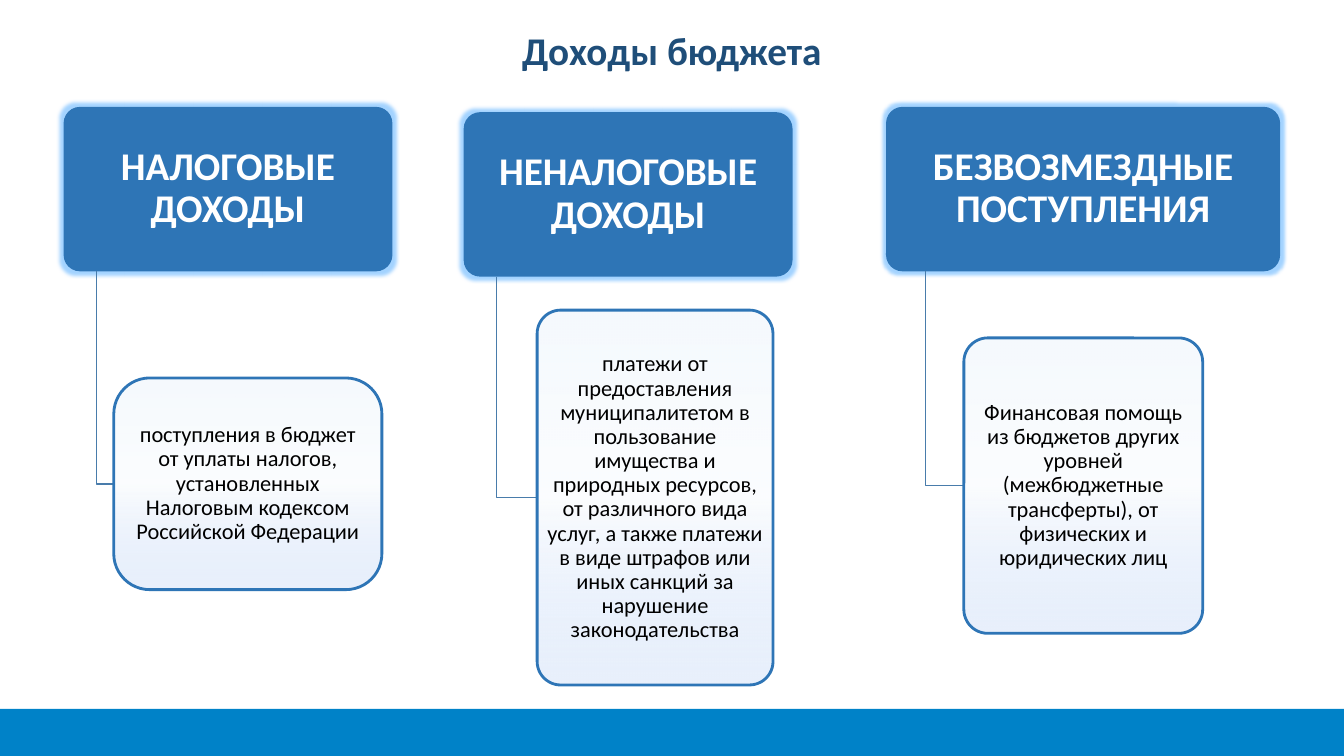
from dataclasses import dataclass

from lxml.etree import SubElement
from pptx import Presentation
from pptx.dml.color import RGBColor
from pptx.enum.shapes import MSO_SHAPE
from pptx.enum.text import MSO_ANCHOR, PP_ALIGN
from pptx.oxml.ns import qn
from pptx.shapes.autoshape import Shape
from pptx.slide import Slide
from pptx.text.text import TextFrame
from pptx.util import Pt

WHITE = RGBColor(0xFF, 0xFF, 0xFF)
BLACK = RGBColor(0x00, 0x00, 0x00)
NAVY = RGBColor(0x1F, 0x4E, 0x79)
BLUE = RGBColor(0x2E, 0x75, 0xB6)
STEEL = RGBColor(0x49, 0x7C, 0xAB)
BAND = RGBColor(0x00, 0x82, 0xC8)
GLOW = RGBColor(0x8C, 0xC8, 0xFF)
MIST = RGBColor(0x9A, 0xC3, 0xF5)
HAZE = RGBColor(0xC2, 0xD8, 0xF8)
PALE = RGBColor(0xE1, 0xEB, 0xFB)
GRADIENT = ((7, MIST, 9), (50, HAZE, 6), (100, PALE, 74))


@dataclass(frozen=True)
class Area:
    left: float
    top: float
    width: float
    height: float


@dataclass(frozen=True)
class Income:
    heading: str
    heading_area: Area
    detail: str
    detail_area: Area
    detail_corner: float
    detail_margins: tuple[float, float]


INCOMES = (
    Income(
        "НАЛОГОВЫЕ ДОХОДЫ", Area(45.4, 76.3, 234.9, 117.5),
        "поступления в бюджет от уплаты налогов, установленных "
        "Налоговым кодексом Российской Федерации",
        Area(81.3, 270, 191.5, 151.2), 0.17, (2.9, 2.9),
    ),
    Income(
        "НЕНАЛОГОВЫЕ ДОХОДЫ", Area(331.2, 80.1, 234.9, 117.5),
        "платежи от предоставления муниципалитетом в пользование имущества "
        "и природных ресурсов, от различного вида услуг, а также платежи "
        "в виде штрафов или иных санкций за нарушение законодательства",
        Area(383.7, 221.5, 168.5, 267.8), 0.1, (2.2, 1.4),
    ),
    Income(
        "БЕЗВОЗМЕЗДНЫЕ ПОСТУПЛЕНИЯ", Area(632.9, 76.3, 281.5, 117.5),
        "Финансовая помощь из бюджетов других уровней (межбюджетные "
        "трансферты), от физических и юридических лиц",
        Area(688.5, 241.4, 170.6, 211), 0.1, (2.2, 1.4),
    ),
)


def write_text(
    frame: TextFrame, text: str, *, size: float, color: RGBColor,
    bold: bool = False, spacing: float = 0.9,
    margins: tuple[float, float] = (7.2, 3.6),
    anchor: MSO_ANCHOR = MSO_ANCHOR.MIDDLE,
) -> None:
    frame.word_wrap = True
    frame.vertical_anchor = anchor
    frame.margin_left = frame.margin_right = Pt(margins[0])
    frame.margin_top = frame.margin_bottom = Pt(margins[1])
    para = frame.paragraphs[0]
    para.alignment = PP_ALIGN.CENTER
    para.line_spacing = spacing
    span = para.add_run()
    span.text = text
    span.font.name = "Calibri"
    span.font.size = Pt(size)
    span.font.bold = bold
    span.font.color.rgb = color


def add_box(page: Slide, area: Area, kind: MSO_SHAPE, color: RGBColor) -> Shape:
    box = page.shapes.add_shape(
        kind, Pt(area.left), Pt(area.top), Pt(area.width), Pt(area.height)
    )
    box.shadow.inherit = False
    box.fill.solid()
    box.fill.fore_color.rgb = color
    box.line.fill.background()
    return box


def add_glow(box: Shape, radius: float) -> None:
    effects = box._element.spPr.find(qn("a:effectLst"))
    glow = SubElement(effects, qn("a:glow"), rad=str(Pt(radius)))
    color = SubElement(glow, qn("a:srgbClr"), val=str(GLOW))
    SubElement(color, qn("a:alpha"), val="80000")


def fill_gradient(box: Shape) -> None:
    box.fill.gradient()
    box.fill.gradient_angle = 270
    stops = box._element.spPr.find(qn("a:gradFill")).find(qn("a:gsLst"))
    for stop in list(stops):
        stops.remove(stop)
    for position, shade, opacity in GRADIENT:
        stop = SubElement(stops, qn("a:gs"), pos=str(position * 1000))
        color = SubElement(stop, qn("a:srgbClr"), val=str(shade))
        SubElement(color, qn("a:alpha"), val=str(opacity * 1000))


def add_elbow(page: Slide, start: Area, end: Area) -> None:
    left = Pt(start.left + start.width / 10)
    middle = Pt(end.top + end.height / 2)
    builder = page.shapes.build_freeform(left, Pt(start.top + start.height))
    builder.add_line_segments(
        [(left, middle), (Pt(end.left), middle)], close=False
    )
    elbow = builder.convert_to_shape()
    elbow.shadow.inherit = False
    elbow.fill.background()
    elbow.line.color.rgb = STEEL
    elbow.line.width = Pt(1)


def add_income(page: Slide, income: Income) -> None:
    heading = add_box(
        page, income.heading_area, MSO_SHAPE.ROUNDED_RECTANGLE, BLUE
    )
    heading.adjustments[0] = 0.1
    add_glow(heading, 5)
    write_text(
        heading.text_frame, income.heading,
        size=28, color=WHITE, bold=True, margins=(4.2, 2.8),
    )
    add_elbow(page, income.heading_area, income.detail_area)
    detail = add_box(
        page, income.detail_area, MSO_SHAPE.ROUNDED_RECTANGLE, PALE
    )
    detail.adjustments[0] = income.detail_corner
    fill_gradient(detail)
    detail.line.color.rgb = BLUE
    detail.line.width = Pt(2)
    write_text(
        detail.text_frame, income.detail,
        size=16, color=BLACK, margins=income.detail_margins,
    )


def main() -> None:
    deck = Presentation()
    deck.slide_width, deck.slide_height = Pt(960), Pt(540)
    page = deck.slides.add_slide(deck.slide_layouts[5])
    title = page.shapes.title
    title.left, title.top = Pt(137.5), Pt(15.1)
    title.width, title.height = Pt(684.7), Pt(41.2)
    write_text(
        title.text_frame, "Доходы бюджета", size=28, color=NAVY,
        bold=True, spacing=1.0, anchor=MSO_ANCHOR.TOP,
    )
    add_box(page, Area(0, 506.3, 960, 33.7), MSO_SHAPE.RECTANGLE, BAND)
    for income in INCOMES:
        add_income(page, income)
    deck.save("out.pptx")


if __name__ == "__main__":
    main()
